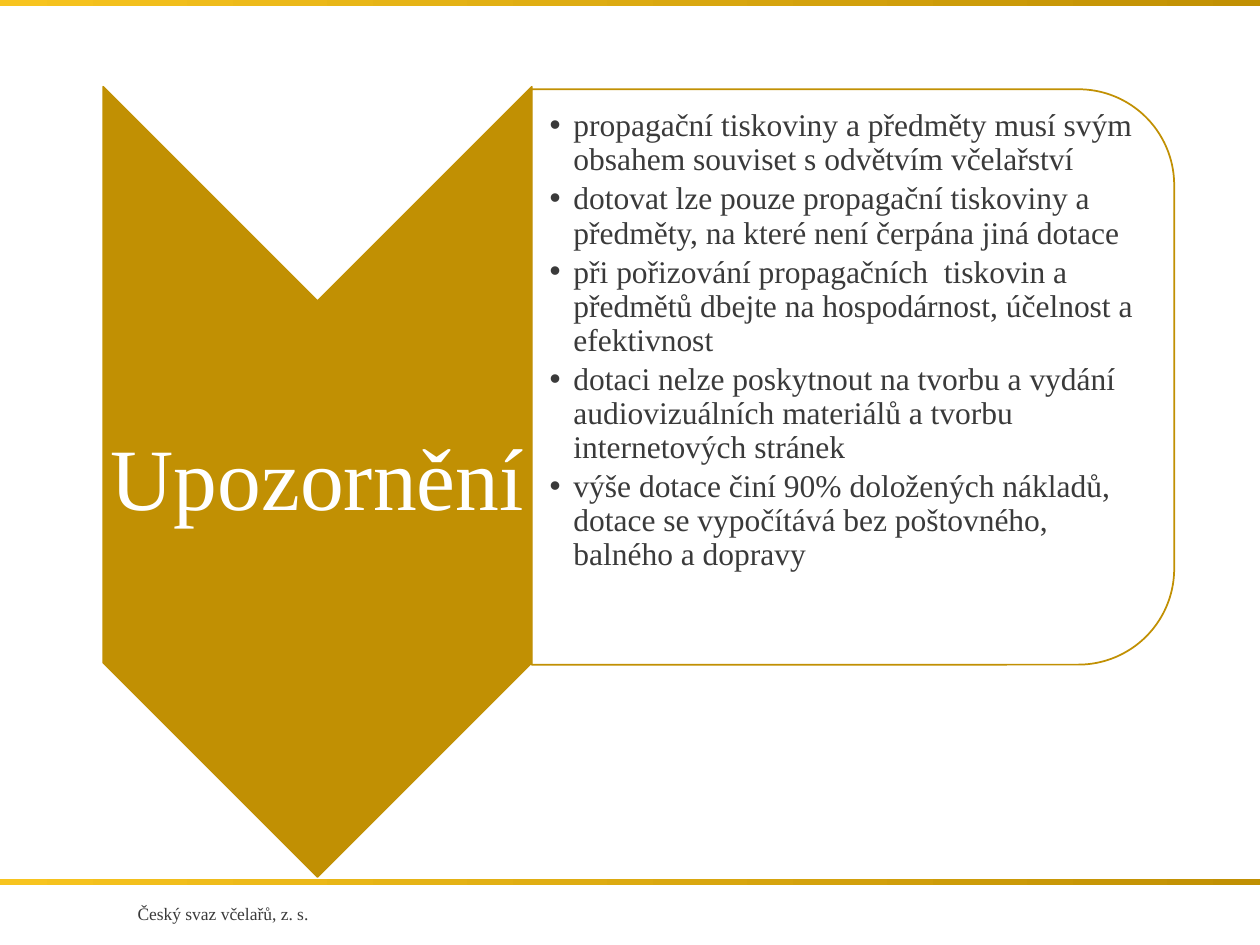
from lxml import etree
from pptx import Presentation
from pptx.dml.color import RGBColor
from pptx.enum.shapes import MSO_SHAPE
from pptx.enum.text import MSO_ANCHOR, MSO_AUTO_SIZE, PP_ALIGN
from pptx.oxml.ns import qn
from pptx.util import Cm, Pt

RECTANGLE = MSO_SHAPE.RECTANGLE
CHEVRON = MSO_SHAPE.CHEVRON
ROUNDED_TOP = MSO_SHAPE.ROUND_2_SAME_RECTANGLE
TOP, MIDDLE = MSO_ANCHOR.TOP, MSO_ANCHOR.MIDDLE
LEFT, CENTER = PP_ALIGN.LEFT, PP_ALIGN.CENTER
NO_AUTOFIT = MSO_AUTO_SIZE.NONE

WARNINGS = [
    "propagační tiskoviny a předměty musí svým obsahem souviset s odvětvím včelařství",
    "dotovat lze pouze propagační tiskoviny a předměty, na které není čerpána jiná dotace",
    "při pořizování propagačních  tiskovin a předmětů dbejte na hospodárnost, účelnost a efektivnost",
    "dotaci nelze poskytnout na tvorbu a vydání audiovizuálních materiálů a tvorbu internetových stránek",
    "výše dotace činí 90% doložených nákladů, dotace se vypočítává bez poštovného, balného a dopravy",
]


def color(value):
    return RGBColor.from_string(value)


class SlideBuilder:
    font = "Times New Roman"
    gold, light_gold = "C19003", "F7C41F"
    dark, white = "3A3A3A", "FFFFFF"

    def __init__(self, page):
        self.page = page

    def gradient_bar(self, top):
        bar = self.page.shapes.add_shape(RECTANGLE, 0, Cm(top), Cm(25.4), Cm(0.12))
        bar.shadow.inherit = False
        bar.line.fill.background()
        bar.fill.gradient()
        bar.fill.gradient_angle = 0
        for stop, value in zip(bar.fill.gradient_stops, (self.light_gold, self.gold)):
            stop.color.rgb = color(value)

    def turned_shape(self, kind, left, top, width, height, fill, opacity=100):
        """Add a shape turned a quarter; the frame is given as seen."""
        shift = (width - height) / 2
        shape = self.page.shapes.add_shape(
            kind, Cm(left + shift), Cm(top - shift), Cm(height), Cm(width))
        shape.rotation = 90
        shape.shadow.inherit = False
        shape.fill.solid()
        shape.fill.fore_color.rgb = color(fill)
        if opacity < 100:
            tint = shape.fill._xPr.find(".//" + qn("a:srgbClr"))
            etree.SubElement(tint, qn("a:alpha"), val=str(opacity * 1000))
        shape.line.color.rgb = color(self.gold)
        shape.line.width = Pt(1)

    def place(self, holder, left, top, width, height, anchor, insets):
        holder.left, holder.top = Cm(left), Cm(top)
        holder.width, holder.height = Cm(width), Cm(height)
        # Bring the text in front of the shapes drawn so far
        self.page.shapes._spTree.append(holder._element)
        frame = holder.text_frame
        frame.word_wrap = True
        frame.auto_size = NO_AUTOFIT
        frame.vertical_anchor = anchor
        frame.margin_left, frame.margin_top, frame.margin_right, frame.margin_bottom = (
            Cm(inset) for inset in insets)
        return frame

    def style(self, para, size, value, align, spacing=1.0, after=0):
        para.alignment = align
        para.line_spacing = spacing
        para.space_before, para.space_after = Pt(0), Pt(after)
        para.font.name = self.font
        para.font.size = Pt(size)
        para.font.color.rgb = color(value)

    def title(self, text, *place):
        frame = self.place(self.page.shapes.title, *place, MIDDLE, [0.08] * 4)
        frame.text = text
        self.style(frame.paragraphs[0], 50, self.white, CENTER, 0.9)

    def bullets(self, items, *place):
        frame = self.place(self.page.placeholders[1], *place, TOP, (0.36, 0.03, 0.03, 0.03))
        frame.text = "\n".join(items)
        for para in frame.paragraphs:
            properties = para._p.get_or_add_pPr()
            properties.set("marL", str(Cm(0.48)))
            properties.set("indent", str(-Cm(0.48)))
            etree.SubElement(properties, qn("a:buChar"), char="•")
            self.style(para, 18, self.dark, LEFT, 0.9, 2.9)

    def footer(self, text, left, top, width, height):
        box = self.page.shapes.add_textbox(Cm(left), Cm(top), Cm(width), Cm(height))
        box.text_frame.word_wrap = True
        box.text_frame.text = text
        self.style(box.text_frame.paragraphs[0], 10, self.dark, CENTER)


def main():
    deck = Presentation()
    deck.slide_width, deck.slide_height = Cm(25.4), Cm(19.05)
    builder = SlideBuilder(deck.slides.add_slide(deck.slide_layouts[1]))

    # Frame of the page
    builder.gradient_bar(17.73)
    builder.footer("Český svaz včelařů, z. s.", 1.37, 18.08, 6.25, 0.69)
    builder.gradient_bar(0)

    # Arrow with the heading
    builder.turned_shape(CHEVRON, 2.08, 1.75, 8.64, 15.93, builder.gold)
    builder.title("Upozornění", 2.08, 6.07, 8.64, 7.29)

    # Panel with the warnings
    builder.turned_shape(ROUNDED_TOP, 10.72, 1.8, 12.95, 11.6, builder.white, 90)
    builder.bullets(WARNINGS, 10.72, 2.18, 12.37, 10.82)

    deck.save("out.pptx")


if __name__ == "__main__":
    main()
